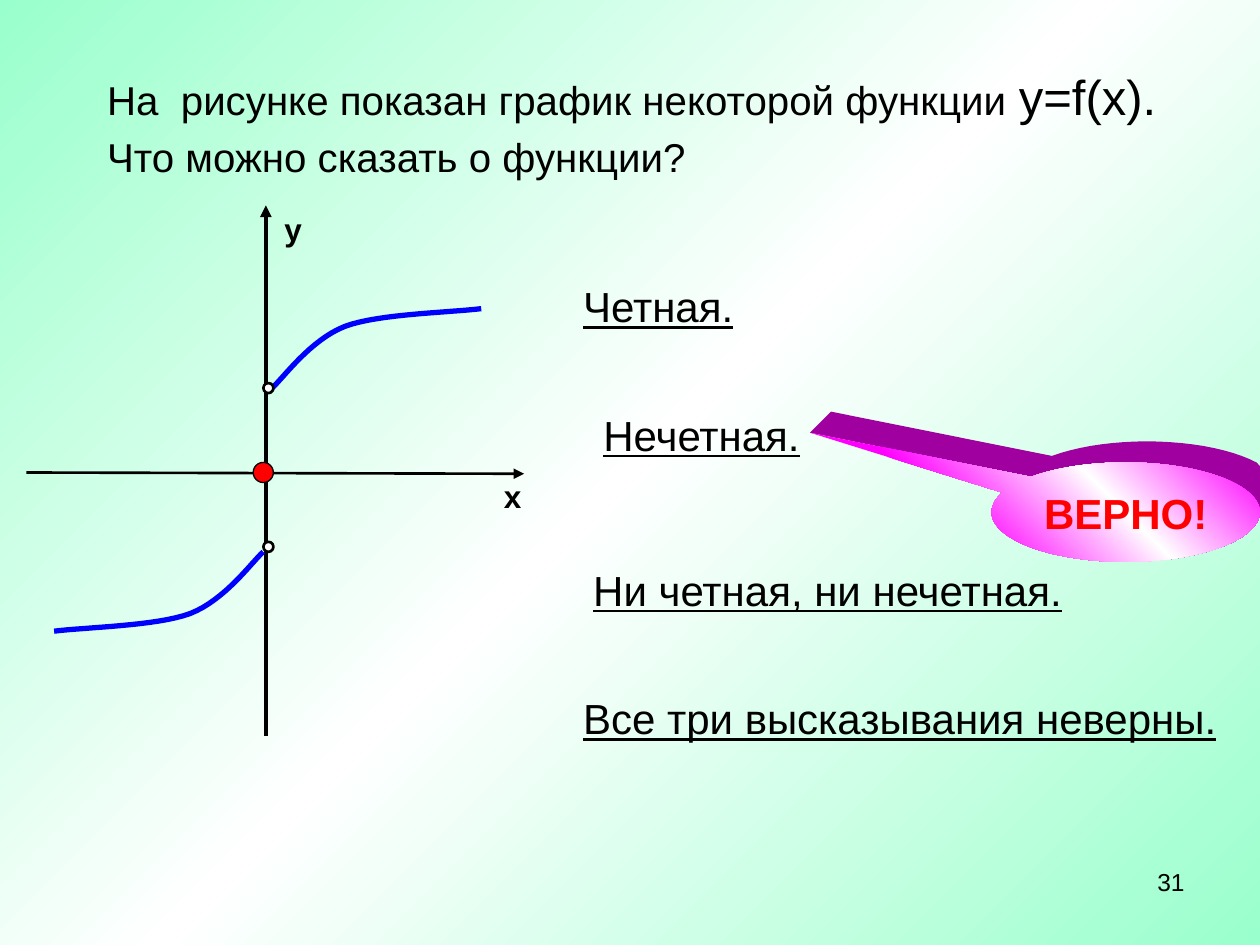
import copy
import math
from typing import NamedTuple

from lxml import etree
from pptx import Presentation
from pptx import util as u
from pptx.dml.color import RGBColor
from pptx.enum import shapes, text
from pptx.oxml.ns import qn

BLACK = RGBColor(0x00, 0x00, 0x00)
WHITE = RGBColor(0xFF, 0xFF, 0xFF)
MINT = RGBColor(0x99, 0xFF, 0xCC)
RED = RGBColor(0xFF, 0x00, 0x00)
BLUE = RGBColor(0x00, 0x00, 0xFF)
MAGENTA = RGBColor(0xFF, 0x00, 0xFF)
PURPLE = RGBColor(0xA0, 0x00, 0xA0)
FONT = "Arial"

WIDTH, HEIGHT = u.Inches(10), u.Inches(7.5)
COLUMNS, ROWS = 100, 75

Point = tuple[float, float]


class Box(NamedTuple):
    column: float
    row: float
    columns: float
    rows: float


class Label(NamedTuple):
    words: str
    box: Box
    size: float = 24
    bold: bool = False
    underline: bool = False
    wrap: bool = False
    align: text.PP_ALIGN = text.PP_ALIGN.LEFT


class Axis(NamedTuple):
    start: Point
    end: Point
    weight: float


class Dot(NamedTuple):
    box: Box
    fill: RGBColor
    weight: float


AXES = [Axis((2.1, 37.5), (41.6, 37.6), 1.5), Axis((21.1, 58.4), (21.1, 16.3), 2.25)]
BRANCH = [(21.6, 30.8), (22.5, 30), (24.6, 27), (27.4, 25.9),
          (30.1, 24.9), (35.9, 24.8), (38.2, 24.5)]
SYMMETRY_CENTER = (21.25, 37.3)
DOTS = [
    Dot(Box(20.1, 36.7, 1.6, 1.6), RED, 0.75),
    Dot(Box(20.9, 30.4, 0.8, 0.8), WHITE, 1.5),
    Dot(Box(20.9, 43, 0.8, 0.8), WHITE, 1.5),
]
LABELS = [
    Label("х", Box(39, 37.4, 3.4, 4), 18, bold=True),
    Label("у", Box(21.6, 16.2, 3.4, 4), 18, bold=True),
    Label("Четная.", Box(45.3, 21.8, 14, 5), underline=True),
    Label("Нечетная.", Box(46.9, 32, 17.8, 5), underline=True),
    Label("Ни четная, ни нечетная.", Box(46.1, 44.3, 39.5, 5), underline=True),
    Label("Все три высказывания неверны.", Box(45.3, 54.5, 52.3, 5), underline=True),
    Label("31", Box(71.7, 68.3, 23.3, 5.2), 14, wrap=True, align=text.PP_ALIGN.RIGHT),
]
CALLOUT = Box(78.7, 36.7, 21.3, 7.9)
CALLOUT_TAIL = (-1.177, -0.799)
DEPTH = 1.67


def x(column: float) -> u.Emu:
    return u.Emu(round(WIDTH * column / COLUMNS))


def y(row: float) -> u.Emu:
    return u.Emu(round(HEIGHT * row / ROWS))


def place(box: Box) -> tuple:
    return x(box.column), y(box.row), x(box.columns), y(box.rows)


def add_run(paragraph, words: str, size: float, color=BLACK, bold=False, underline=False) -> None:
    run = paragraph.add_run()
    run.text = words
    run.font.name = FONT
    run.font.size = u.Pt(size)
    run.font.color.rgb = color
    run.font.bold = bold
    run.font.underline = underline


def set_gradient(fill, owner, edge: RGBColor, middle: RGBColor, clockwise: float) -> None:
    fill.gradient()
    fill.gradient_angle = 360 - clockwise
    stops = owner.find(".//" + qn("a:gsLst"))
    stops.insert(1, copy.deepcopy(stops[0]))
    for stop, color, position in zip(fill.gradient_stops, (edge, middle, edge), (0, 0.5, 1)):
        stop.color.rgb = color
        stop.position = position


def add_title(slide) -> None:
    title = slide.shapes.title
    title.left, title.top, title.width, title.height = place(Box(7.5, 4.8, 93.3, 10))
    frame = title.text_frame
    frame.word_wrap = True
    frame.auto_size = text.MSO_AUTO_SIZE.NONE
    frame.vertical_anchor = text.MSO_ANCHOR.TOP
    first, second = frame.paragraphs[0], frame.add_paragraph()
    add_run(first, "На  рисунке показан график некоторой функции ", 23)
    add_run(first, "y=f(x).", 28)
    add_run(second, "Что можно сказать о функции?", 23)
    second.space_before = u.Pt(4)
    for paragraph in (first, second):
        paragraph.alignment = text.PP_ALIGN.LEFT


def add_label(slide, label: Label) -> None:
    frame = slide.shapes.add_textbox(*place(label.box)).text_frame
    frame.word_wrap = label.wrap
    paragraph = frame.paragraphs[0]
    paragraph.alignment = label.align
    add_run(paragraph, label.words, label.size, bold=label.bold, underline=label.underline)


def add_axis(slide, axis: Axis) -> None:
    (x1, y1), (x2, y2) = axis.start, axis.end
    connector = slide.shapes.add_connector(
        shapes.MSO_CONNECTOR.STRAIGHT, x(x1), y(y1), x(x2), y(y2))
    connector.line.color.rgb = BLACK
    connector.line.width = u.Pt(axis.weight)
    etree.SubElement(connector.line._get_or_add_ln(), qn("a:tailEnd"), type="triangle")
    etree.SubElement(connector._element.spPr, qn("a:effectLst"))


def add_path(slide, points: list[Point], close: bool):
    (start_x, start_y), *rest = [(x(column), y(row)) for column, row in points]
    builder = slide.shapes.build_freeform(start_x, start_y)
    builder.add_line_segments(rest, close=close)
    shape = builder.convert_to_shape()
    shape.shadow.inherit = False
    return shape


def bezier(controls: list[Point], steps: int = 16) -> list[Point]:
    points = [controls[0]]
    for first in range(0, len(controls) - 1, 3):
        segment = controls[first:first + 4]
        for step in range(1, steps + 1):
            t = step / steps
            weights = [math.comb(3, k) * t**k * (1 - t)**(3 - k) for k in range(4)]
            points.append(tuple(sum(w * p[i] for w, p in zip(weights, segment)) for i in (0, 1)))
    return points


def add_curve(slide, points: list[Point]) -> None:
    curve = add_path(slide, points, close=False)
    curve.fill.background()
    curve.line.color.rgb = BLUE
    curve.line.width = u.Pt(3)


def add_dot(slide, dot: Dot) -> None:
    shape = slide.shapes.add_shape(shapes.MSO_SHAPE.OVAL, *place(dot.box))
    shape.shadow.inherit = False
    shape.fill.solid()
    shape.fill.fore_color.rgb = dot.fill
    shape.line.color.rgb = BLACK
    shape.line.width = u.Pt(dot.weight)


def add_callout(slide) -> None:
    radius_x, radius_y = CALLOUT.columns / 2, CALLOUT.rows / 2
    center_x, center_y = CALLOUT.column + radius_x, CALLOUT.row + radius_y
    tip = (center_x + CALLOUT_TAIL[0] * CALLOUT.columns,
           center_y + CALLOUT_TAIL[1] * CALLOUT.rows)
    arc = [(center_x + radius_x * math.cos(math.radians(angle)),
            center_y - radius_y * math.sin(math.radians(angle)))
           for angle in range(135, -1, -5)]
    back = [(min(column + DEPTH, COLUMNS), row - DEPTH) for column, row in [tip, *arc]]
    side = add_path(slide, [tip, *back, arc[-1], (center_x, center_y), arc[0]], close=True)
    side.fill.solid()
    side.fill.fore_color.rgb = PURPLE
    side.line.fill.background()

    callout = slide.shapes.add_shape(shapes.MSO_SHAPE.OVAL_CALLOUT, *place(CALLOUT))
    callout.adjustments[0], callout.adjustments[1] = CALLOUT_TAIL
    callout.shadow.inherit = False
    set_gradient(callout.fill, callout._element, MAGENTA, WHITE, 315)
    callout.line.fill.background()
    frame = callout.text_frame
    frame.word_wrap = False
    frame.vertical_anchor = text.MSO_ANCHOR.MIDDLE
    frame.paragraphs[0].alignment = text.PP_ALIGN.CENTER
    add_run(frame.paragraphs[0], "ВЕРНО!", 24, RED, bold=True)


def main() -> None:
    presentation = Presentation()
    presentation.slide_width, presentation.slide_height = WIDTH, HEIGHT
    slide = presentation.slides.add_slide(presentation.slide_layouts[5])
    set_gradient(slide.background.fill, slide._element, MINT, WHITE, 45)
    add_title(slide)
    for axis in AXES:
        add_axis(slide, axis)
    branch = bezier(BRANCH)
    add_curve(slide, branch)
    add_curve(slide, [tuple(2 * c - p for c, p in zip(SYMMETRY_CENTER, point)) for point in branch])
    for dot in DOTS:
        add_dot(slide, dot)
    for label in LABELS:
        add_label(slide, label)
    add_callout(slide)
    presentation.save("out.pptx")


if __name__ == "__main__":
    main()
